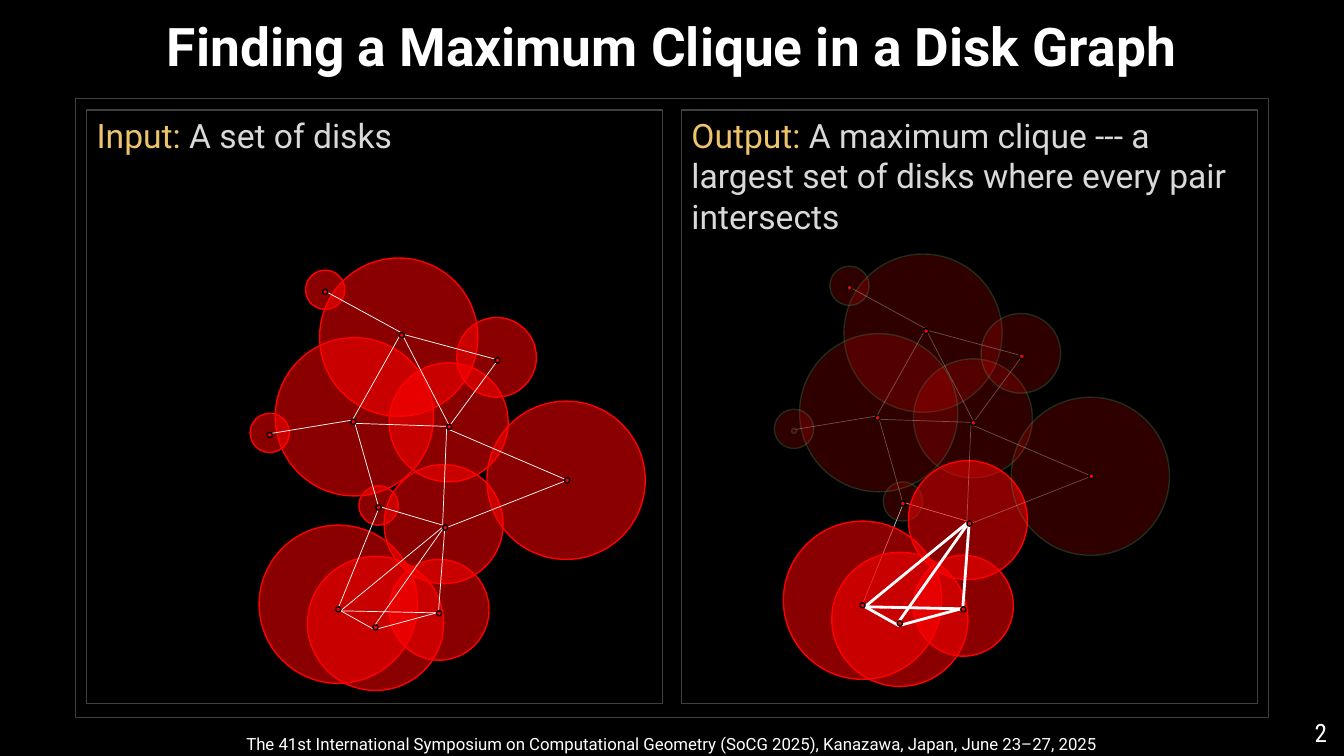
from lxml import etree
from pptx import Presentation
from pptx.dml.color import RGBColor
from pptx.enum.shapes import MSO_CONNECTOR, MSO_SHAPE
from pptx.enum.text import MSO_ANCHOR, PP_ALIGN
from pptx.oxml.ns import qn
from pptx.util import Inches, Pt

RECT, OVAL = MSO_SHAPE.RECTANGLE, MSO_SHAPE.OVAL
STRAIGHT = MSO_CONNECTOR.STRAIGHT
TOP, MIDDLE = MSO_ANCHOR.TOP, MSO_ANCHOR.MIDDLE
LEFT, CENTER, RIGHT = PP_ALIGN.LEFT, PP_ALIGN.CENTER, PP_ALIGN.RIGHT

COLORS = {
    "black": "000000",
    "white": "FFFFFF",
    "frame": "404040",
    "label": "EDC46C",
    "body": "D9D9D9",
    "disk": "FF0000",
    "faded_rim": "3FB96C",
}
FONT = "Roboto"
NUMBER_FONT = "Roboto Condensed"

# fill alpha, line color, line alpha
BRIGHT = (54, "disk", 100)
FADED = (18, "faded_rim", 24)
SOLID = (100, "black", 100)

DOT = 0.05
# left, top, width, height, center dot left, center dot top
DISKS = {
    "top": (0.69, 0, 1.57, 1.57, 1.48, 0.74),
    "middle": (1.38, 1.04, 1.18, 1.18, 1.95, 1.65),
    "upper right": (2.05, 0.59, 0.79, 0.79, 2.43, 0.99),
    "inner": (1.08, 2.26, 0.39, 0.39, 1.25, 2.45),
    "left": (0.25, 0.79, 1.57, 1.57, 1, 1.6),
    "upper left": (0.55, 0.12, 0.39, 0.39, 0.72, 0.31),
    "hub": (1.33, 2.05, 1.18, 1.18, 1.91, 2.65),
    "far left": (0, 1.54, 0.39, 0.39, 0.17, 1.73),
    "lower left": (0.09, 2.65, 1.57, 1.57, 0.85, 3.46),
    "far right": (2.35, 1.42, 1.57, 1.57, 3.12, 2.18),
    "bottom": (0.57, 2.96, 1.35, 1.33, 1.22, 3.64),
    "lower right": (1.38, 2.99, 0.99, 1, 1.85, 3.5),
}
CLIQUE = {"hub", "lower left", "bottom", "lower right"}
OUTER_EDGES = [
    (0.73, 0.32, 1.5, 0.74), (0.21, 1.74, 1, 1.61),
    (1.02, 1.6, 1.48, 0.78), (1.97, 1.65, 1.52, 0.78),
    (2.42, 1, 1.53, 0.76), (2.46, 1.01, 1.99, 1.65),
    (1.04, 1.64, 1.95, 1.67), (1.04, 1.64, 1.27, 2.45),
    (1.97, 1.7, 3.16, 2.21), (1.96, 2.67, 3.13, 2.21),
    (1.91, 2.65, 1.95, 1.69),
]
INNER_EDGES = [(1.91, 2.65, 1.3, 2.47), (1.27, 2.5, 0.88, 3.46)]
CLIQUE_EDGES = [
    (1.93, 2.7, 1.87, 3.5), (0.91, 3.49, 1.91, 2.67),
    (1.24, 3.64, 1.91, 2.69), (0.9, 3.5, 1.85, 3.52),
    (0.9, 3.5, 1.24, 3.69), (1.26, 3.68, 1.85, 3.52),
]


def paint(fill, color, alpha=100):
    fill.solid()
    fill.fore_color.rgb = RGBColor.from_string(COLORS[color])
    if alpha < 100:
        rgb = fill._xPr.find(".//" + qn("a:srgbClr"))
        etree.SubElement(rgb, qn("a:alpha")).set("val", str(alpha * 1000))


def add_figure(shapes, kind, box, fill, line, width=1, fill_alpha=100, line_alpha=100):
    figure = shapes.add_shape(kind, *map(Inches, box))
    figure.shadow.inherit = False
    if fill:
        paint(figure.fill, fill, fill_alpha)
    else:
        figure.fill.background()
    paint(figure.line.fill, line, line_alpha)
    figure.line.width = Pt(width)
    return figure


def write(shape, runs, size, align=LEFT, anchor=MIDDLE, font=FONT, bold=False):
    frame = shape.text_frame
    frame.word_wrap = True
    frame.vertical_anchor = anchor
    paragraph = frame.paragraphs[0]
    paragraph.alignment = align
    for words, color in runs:
        run = paragraph.add_run()
        run.text = words
        run.font.name = font
        run.font.size = Pt(size)
        run.font.bold = bold
        run.font.color.rgb = RGBColor.from_string(COLORS[color])
    return paragraph


def add_title(slide, box, words):
    title = add_figure(slide.shapes, RECT, box, None, "black")
    paragraph = write(title, [(words, "white")], 38, CENTER, bold=True)
    paragraph.line_spacing = 0.9


def add_footer(slide, box, words):
    footer = add_figure(slide.shapes, RECT, box, "black", "black", 0.5)
    write(footer, [(words, "white")], 12, CENTER)


def add_page_number(slide, box, number):
    page = slide.shapes.add_textbox(*map(Inches, box))
    write(page, [(number, "white")], 18, RIGHT, TOP, NUMBER_FONT)


def add_edges(shapes, origin, edges, width=0.5, alpha=100):
    x, y = origin
    for x1, y1, x2, y2 in edges:
        edge = shapes.add_connector(
            STRAIGHT, Inches(x + x1), Inches(y + y1), Inches(x + x2), Inches(y + y2))
        paint(edge.line.fill, "white", alpha)
        edge.line.width = Pt(width)
        etree.SubElement(edge._element.spPr, qn("a:effectLst"))


def add_circle(shapes, box, style):
    fill_alpha, rim, rim_alpha = style
    add_figure(shapes, OVAL, box, "disk", rim, 1, fill_alpha, rim_alpha)


def add_disk_graph(slide, origin, show_clique):
    x, y = origin
    shapes = slide.shapes.add_group_shape().shapes
    if show_clique:
        add_edges(shapes, origin, INNER_EDGES, alpha=76)
    for name, (left, top, width, height, _, _) in DISKS.items():
        style = FADED if show_clique and name not in CLIQUE else BRIGHT
        add_circle(shapes, (x + left, y + top, width, height), style)
    add_edges(shapes, origin, OUTER_EDGES, alpha=30 if show_clique else 100)
    if not show_clique:
        add_edges(shapes, origin, INNER_EDGES)
    add_edges(shapes, origin, CLIQUE_EDGES, 2 if show_clique else 0.5)
    for name, (*_, left, top) in DISKS.items():
        style = FADED if show_clique and name == "far left" else SOLID
        add_circle(shapes, (x + left, y + top, DOT, DOT), style)


def add_panel(slide, box, label, words, graph_offset, show_clique):
    panel = add_figure(slide.shapes, RECT, box, None, "frame")
    write(panel, [(label, "label"), (words, "body")], 24, anchor=TOP)
    origin = (box[0] + graph_offset[0], box[1] + graph_offset[1])
    add_disk_graph(slide, origin, show_clique)


def main():
    deck = Presentation()
    deck.slide_width, deck.slide_height = Inches(13.33), Inches(7.5)
    slide = deck.slides.add_slide(deck.slide_layouts[6])
    paint(slide.background.fill, "black")

    add_title(slide, (0, 0.07, 13.33, 0.84), "Finding a Maximum Clique in a Disk Graph")
    add_figure(slide.shapes, RECT, (0.75, 0.98, 11.83, 6.14), None, "frame")
    add_footer(
        slide, (0, 7.25, 13.33, 0.25),
        "The 41st International Symposium on Computational Geometry "
        "(SoCG 2025), Kanazawa, Japan, June 23–27, 2025")
    add_page_number(slide, (10.76, 7.07, 2.5, 0.83), "2")
    add_panel(slide, (0.86, 1.09, 5.71, 5.89), "Input: ", "A set of disks",
              (1.62, 1.47), False)
    add_panel(slide, (6.76, 1.09, 5.71, 5.89), "Output: ",
              "A maximum clique --- a largest set of disks where every pair intersects",
              (0.92, 1.43), True)
    deck.save("out.pptx")


if __name__ == "__main__":
    main()
